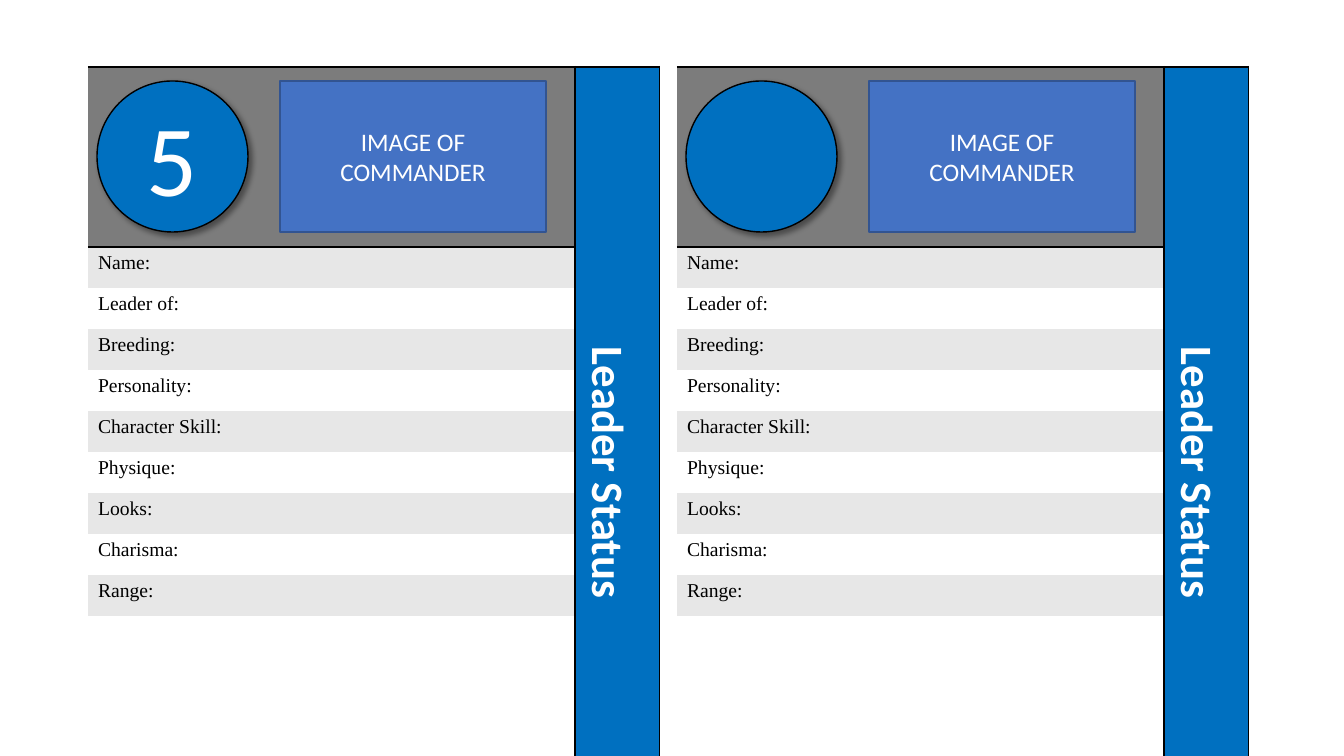
from lxml import etree
from pptx import Presentation
from pptx.dml.color import RGBColor
from pptx.enum.shapes import MSO_SHAPE
from pptx.enum.text import MSO_ANCHOR, PP_ALIGN
from pptx.oxml import parse_xml
from pptx.oxml.ns import nsdecls, qn
from pptx.util import Pt

PX = 914400 / 100.8
OVAL, RECT = MSO_SHAPE.OVAL, MSO_SHAPE.RECTANGLE
CENTER, MIDDLE = PP_ALIGN.CENTER, MSO_ANCHOR.MIDDLE
NO_STYLE = "{2D5ABB26-0587-4C30-8999-92F81FD0307C}"
BLACK, WHITE, BLUE = "000000", "FFFFFF", "0070C0"
GREY, BAND = "7C7C7C", "E7E7E7"
FIELDS = ["Name:", "Leader of:", "Breeding:", "Personality:", "Character Skill:",
          "Physique:", "Looks:", "Charisma:", "Range:"]
COL_WIDTHS = [166, 321, 85]
ROW_HEIGHTS = [180] + [41] * 10
LAST = len(ROW_HEIGHTS) - 1
CARDS = [(88, "5"), (677, "")]


def rgb(color):
    return RGBColor.from_string(color)


def write(tf, text, font, size, color, align=None, bold=False):
    tf.text = text
    p = tf.paragraphs[0]
    p.alignment = align
    for r in p.runs:
        r.font.name, r.font.size, r.font.bold = font, Pt(size), bold
        r.font.color.rgb = rgb(color)


prs = Presentation()
prs.slide_width, prs.slide_height = int(1344 * PX), int(756 * PX)
s = prs.slides.add_slide(prs.slide_layouts[6])

for left, number in CARDS:
    box = [int(v * PX) for v in (left, 67, sum(COL_WIDTHS), sum(ROW_HEIGHTS))]
    table = s.shapes.add_table(len(ROW_HEIGHTS), len(COL_WIDTHS), *box).table
    table.first_row = table.horz_banding = False
    table._tbl.tblPr.find(qn("a:tableStyleId")).text = NO_STYLE
    for column, width in zip(table.columns, COL_WIDTHS):
        column.width = int(width * PX)
    for row, height in zip(table.rows, ROW_HEIGHTS):
        row.height = int(height * PX)

    for i in range(len(ROW_HEIGHTS)):
        for j in range(len(COL_WIDTHS)):
            cell = table.cell(i, j)
            borders = {}
            if j == 2:
                borders["lnL"] = 1
            elif j == 1 or i in (0, LAST):
                borders["lnR"] = 1
            if i == 0:
                borders["lnT"] = 2
            if i == LAST or i == 0:
                borders["lnB"] = 2
            tcPr = cell._tc.get_or_add_tcPr()
            for side, width in borders.items():
                ln = etree.SubElement(tcPr, qn("a:" + side), w=str(Pt(width)))
                fill = etree.SubElement(ln, qn("a:solidFill"))
                etree.SubElement(fill, qn("a:srgbClr"), val=BLACK)
            color = BLUE if j == 2 else GREY if i == 0 else BAND if i % 2 else WHITE
            cell.fill.solid()
            cell.fill.fore_color.rgb = rgb(color)

    for i, field in enumerate(FIELDS, 1):
        write(table.cell(i, 0).text_frame, field, "Times New Roman", 14, BLACK)
    for i in (0, LAST):
        table.cell(i, 0).merge(table.cell(i, 1))
    status = table.cell(0, 2)
    status.merge(table.cell(LAST, 2))
    status.vertical_anchor = MIDDLE
    status._tc.tcPr.set("vert", "vert")
    write(status.text_frame, "Leader Status", "Calibri", 32, WHITE, CENTER, True)

    for kind, dx, width, fill, line, text, size in [
        (OVAL, 9, 151, BLUE, BLACK, number, 72),
        (RECT, 192, 266, "4472C4", "325491", "IMAGE OF COMMANDER", 18),
    ]:
        sp = s.shapes.add_shape(kind, *[int(v * PX) for v in (left + dx, 81, width, 151)])
        sp.shadow.inherit = False
        sp.fill.solid()
        sp.fill.fore_color.rgb = rgb(fill)
        sp.line.color.rgb = rgb(line)
        sp.line.width = Pt(1)
        sp.text_frame.vertical_anchor = MIDDLE
        if text:
            write(sp.text_frame, text, "Calibri", size, WHITE, CENTER)
        if kind == OVAL:
            effects = sp._element.spPr.find(qn("a:effectLst"))
            effects.append(parse_xml(
                f'<a:outerShdw {nsdecls("a")} blurRad="{Pt(4)}" dist="{Pt(3)}" dir="2700000" '
                f'algn="tl" rotWithShape="0"><a:srgbClr val="{BLACK}">'
                '<a:alpha val="40000"/></a:srgbClr></a:outerShdw>'))

prs.save("out.pptx")
